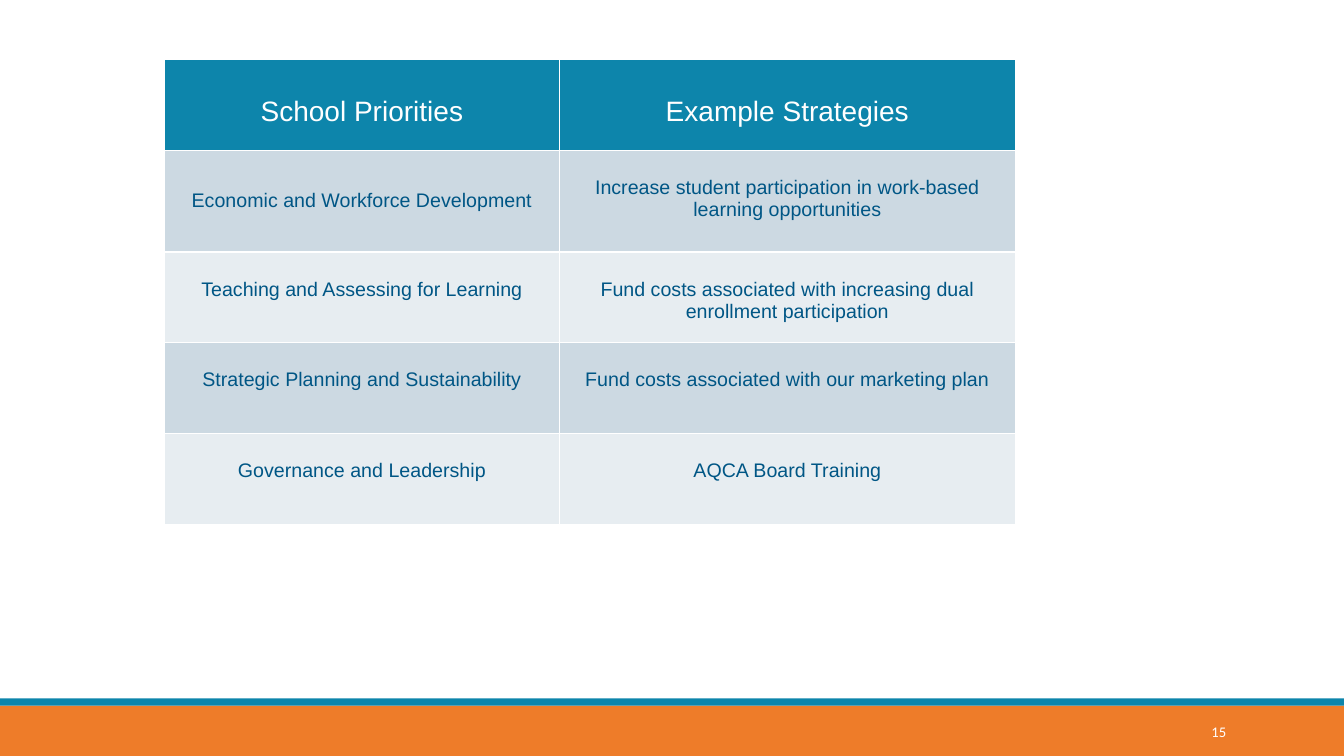
from lxml import etree
from pptx import Presentation
from pptx.dml.color import RGBColor
from pptx.enum.shapes import MSO_SHAPE
from pptx.enum.text import MSO_ANCHOR, PP_ALIGN
from pptx.oxml.ns import qn
from pptx.util import Inches, Pt

RECTANGLE = MSO_SHAPE.RECTANGLE
CENTER, RIGHT = PP_ALIGN.CENTER, PP_ALIGN.RIGHT
TOP, MIDDLE = MSO_ANCHOR.TOP, MSO_ANCHOR.MIDDLE

THEME = {
    "teal": "0D85AB", "orange": "EE7C29", "white": "FFFFFF", "navy": "005685",
    "bands": ("CCD9E2", "E7EDF1"),
    "header_size": 20, "body_size": 14, "number_size": 10.5,
    "table_font": "Arial", "number_font": "Calibri",
}
WIDTH, HEIGHT = 13.33, 7.5

PRIORITIES = [
    ("School Priorities", "Example Strategies"),
    ("Economic and Workforce Development",
     "Increase student participation in work-based learning opportunities"),
    ("Teaching and Assessing for Learning",
     "Fund costs associated with increasing dual enrollment participation"),
    ("Strategic Planning and Sustainability",
     "Fund costs associated with our marketing plan"),
    ("Governance and Leadership", "AQCA Board Training"),
]
COLUMN_WIDTHS = (3.92, 4.52)
ROW_HEIGHTS = (0.9, 1.01, 0.9, 0.9, 0.9)
HEADER_INSET, BODY_INSET, FIRST_PRIORITY_INSET = 0.36, 0.26, 0.39


def write(frame, text, align, size, font, color):
    paragraph = frame.paragraphs[0]
    paragraph.alignment = align
    run = paragraph.add_run()
    run.text = text
    for name, value in {"size": Pt(size), "name": font, "bold": False}.items():
        setattr(run.font, name, value)
    run.font.color.rgb = RGBColor.from_string(color)


def add_borders(cell, color, points):
    properties = cell._tc.get_or_add_tcPr()
    for position, side in enumerate(("lnL", "lnR", "lnT", "lnB")):
        line = etree.Element(qn(f"a:{side}"), w=str(Pt(points)))
        fill = etree.SubElement(line, qn("a:solidFill"))
        etree.SubElement(fill, qn("a:srgbClr"), val=color)
        properties.insert(position, line)


deck = Presentation()
deck.slide_width, deck.slide_height = Inches(WIDTH), Inches(HEIGHT)
slide = deck.slides.add_slide(deck.slide_layouts[6])

# Footer bands
footer_top = HEIGHT * 14 / 15
stripe_height = 0.07
for top, height, color in (
    (footer_top, HEIGHT - footer_top, THEME["orange"]),
    (footer_top - stripe_height, stripe_height, THEME["teal"]),
):
    band = slide.shapes.add_shape(
        RECTANGLE, 0, Inches(top), Inches(WIDTH), Inches(height))
    band.shadow.inherit = False
    band.fill.solid()
    band.fill.fore_color.rgb = RGBColor.from_string(color)
    band.line.fill.background()

# Priorities and strategies
priorities = slide.shapes.add_table(
    len(PRIORITIES), len(COLUMN_WIDTHS), Inches(1.63), Inches(0.59),
    Inches(sum(COLUMN_WIDTHS)), Inches(sum(ROW_HEIGHTS))).table
for column, width in zip(priorities.columns, COLUMN_WIDTHS):
    column.width = Inches(width)
for row, height in zip(priorities.rows, ROW_HEIGHTS):
    row.height = Inches(height)

for r, texts in enumerate(PRIORITIES):
    if r == 0:
        fill, color = THEME["teal"], THEME["white"]
        size, inset = THEME["header_size"], HEADER_INSET
    else:
        fill, color = THEME["bands"][(r - 1) % 2], THEME["navy"]
        size, inset = THEME["body_size"], BODY_INSET
    for c, text in enumerate(texts):
        cell = priorities.cell(r, c)
        cell_inset = FIRST_PRIORITY_INSET if (r, c) == (1, 0) else inset
        cell_format = {"vertical_anchor": TOP, "margin_top": Inches(cell_inset)}
        for name, value in cell_format.items():
            setattr(cell, name, value)
        cell.fill.solid()
        cell.fill.fore_color.rgb = RGBColor.from_string(fill)
        add_borders(cell, THEME["white"], 1)
        write(cell.text_frame, text, CENTER, size, THEME["table_font"], color)

# Slide number
number = slide.shapes.add_textbox(
    Inches(10.83), Inches(7.06), Inches(1.43), Inches(0.4)).text_frame
for name, value in {"word_wrap": True, "vertical_anchor": MIDDLE}.items():
    setattr(number, name, value)
write(number, "15", RIGHT, THEME["number_size"], THEME["number_font"],
      THEME["white"])

deck.save("out.pptx")
